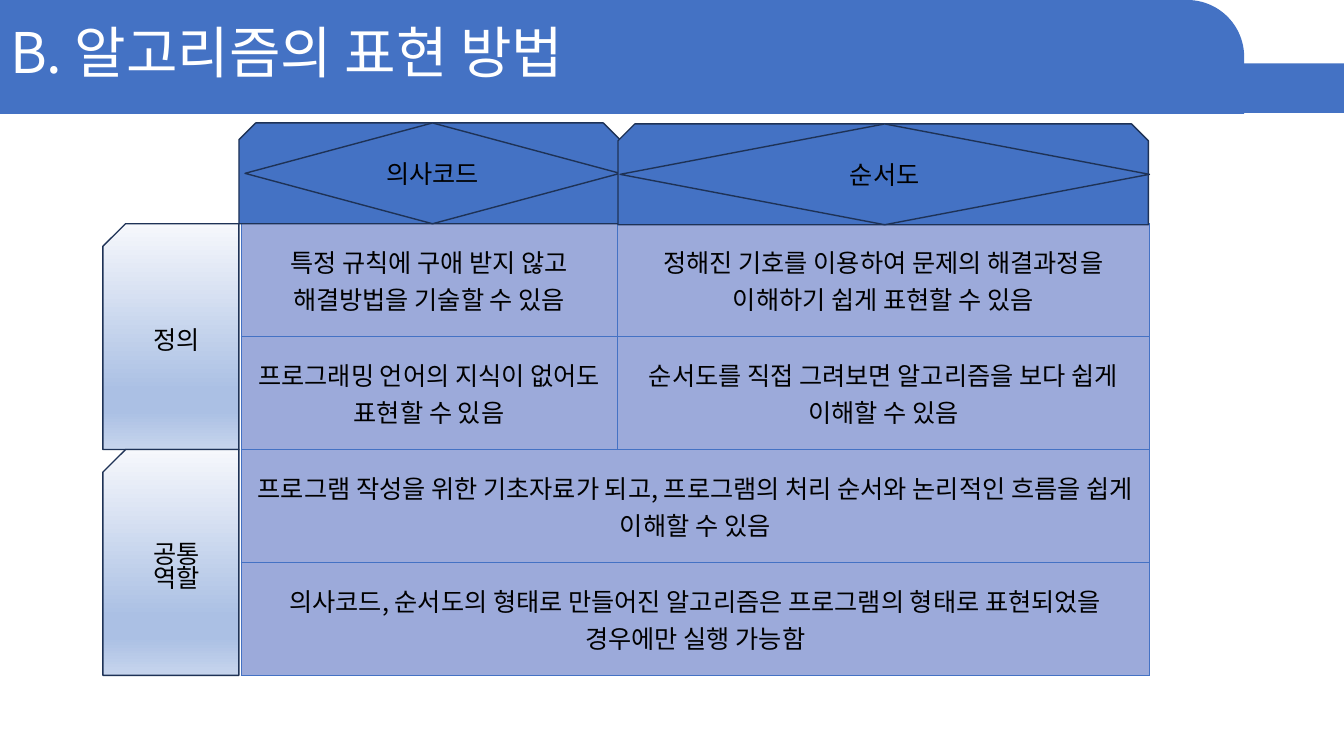
from lxml import etree
from pptx import Presentation
from pptx.dml.color import RGBColor
from pptx.enum.shapes import MSO_SHAPE as Preset
from pptx.enum.text import MSO_ANCHOR as Anchor, PP_ALIGN as Align
from pptx.oxml import parse_xml
from pptx.oxml.ns import nsdecls, qn
from pptx.util import Inches, Pt

FONT = "Noto Sans CJK KR"
BLUE, OUTLINE, CELL = "4472C4", "1E3256", "9CAADA"
GRADIENT = [(0, "F6F8FC"), (74, "ABC0E4"), (83, "ABC0E4"), (100, "C7D5ED")]

CELL_TEXTS = [
    ["특정 규칙에 구애 받지 않고 해결방법을 기술할 수 있음",
     "정해진 기호를 이용하여 문제의 해결과정을 이해하기 쉽게 표현할 수 있음"],
    ["프로그래밍 언어의 지식이 없어도 표현할 수 있음",
     "순서도를 직접 그려보면 알고리즘을 보다 쉽게 이해할 수 있음"],
    ["프로그램 작성을 위한 기초자료가 되고, 프로그램의 처리 순서와 논리적인 흐름을 쉽게 이해할 수 있음"],
    ["의사코드, 순서도의 형태로 만들어진 알고리즘은 프로그램의 형태로 표현되었을 경우에만 실행 가능함"],
]
COLUMN_WIDTHS = [3.73, 5.28]
TABLE_LEFT, TABLE_TOP, ROW_HEIGHT = 2.39, 2.22, 1.12


def color(value):
    return RGBColor.from_string(value)


def write_text(frame, text, size=18, fill="000000", align=Align.CENTER, spacing=None):
    """Fill a text frame, one paragraph for each line of text."""
    frame.word_wrap = True
    frame.vertical_anchor = Anchor.MIDDLE
    for index, line in enumerate(text.split("\n")):
        paragraph = frame.paragraphs[0] if index == 0 else frame.add_paragraph()
        paragraph.alignment = align
        paragraph.line_spacing = spacing
        run = paragraph.add_run()
        run.text = line
        run.font.size = Pt(size)
        run.font.name = FONT
        run.font.color.rgb = color(fill)
        east_asian = etree.SubElement(run.font._element, qn("a:ea"))
        east_asian.set("typeface", FONT)


def add_preset(slide, preset, left, top, width, height, outlined=True):
    shape = slide.shapes.add_shape(
        preset, Inches(left), Inches(top), Inches(width), Inches(height))
    shape.shadow.inherit = False
    shape.fill.solid()
    shape.fill.fore_color.rgb = color(BLUE)
    if outlined:
        shape.line.color.rgb = color(OUTLINE)
        shape.line.width = Pt(1)
    else:
        shape.line.fill.background()
    return shape


def add_title(slide, text):
    # Header band with a rounded tab
    add_preset(slide, Preset.RECTANGLE, 0, 0.63, 13.33, 0.49, outlined=False)
    tab = add_preset(slide, Preset.ROUND_1_RECTANGLE, 0, 0, 12.34, 1.13, outlined=False)
    tab.adjustments[0] = 0.5

    # Title in front of the band
    title = slide.shapes.title
    title.left, title.top = Inches(0), Inches(0)
    title.width, title.height = Inches(11.5), Inches(1.1)
    write_text(title.text_frame, text, size=40, fill="FFFFFF",
               align=Align.LEFT, spacing=0.9)
    slide.shapes._spTree.append(title._element)


def add_row_label(slide, text, top):
    shape = add_preset(slide, Preset.SNIP_1_RECTANGLE, 1.02, top, 1.35, 2 * ROW_HEIGHT)
    properties = shape._element.spPr
    properties.find(qn("a:xfrm")).set("flipH", "1")
    stops = "".join(
        f'<a:gs pos="{position * 1000}"><a:srgbClr val="{value}"/></a:gs>'
        for position, value in GRADIENT)
    gradient = parse_xml(
        f'<a:gradFill {nsdecls("a")} rotWithShape="1"><a:gsLst>{stops}</a:gsLst>'
        '<a:lin ang="5400000" scaled="0"/></a:gradFill>')
    properties.replace(properties.find(qn("a:solidFill")), gradient)
    write_text(shape.text_frame, text, spacing=0.82)


def add_column_header(slide, text, top, snip_span, diamond_span):
    add_preset(slide, Preset.SNIP_2_SAME_RECTANGLE, snip_span[0], top, snip_span[1], 1)
    diamond = add_preset(slide, Preset.FLOWCHART_DECISION,
                         diamond_span[0], top, diamond_span[1], 1)
    write_text(diamond.text_frame, text)


def format_cell(cell):
    properties = cell._tc.get_or_add_tcPr()
    for side in ("lnL", "lnR", "lnT", "lnB"):
        properties.append(parse_xml(
            f'<a:{side} {nsdecls("a")} w="6350"><a:solidFill>'
            f'<a:srgbClr val="{BLUE}"/></a:solidFill></a:{side}>'))
    cell.fill.solid()
    cell.fill.fore_color.rgb = color(CELL)


def add_comparison_table(slide):
    frame = slide.shapes.add_table(
        len(CELL_TEXTS), len(COLUMN_WIDTHS), Inches(TABLE_LEFT), Inches(TABLE_TOP),
        Inches(sum(COLUMN_WIDTHS)), Inches(ROW_HEIGHT * len(CELL_TEXTS)))
    table = frame.table
    table.first_row = table.horz_banding = False
    for column, width in zip(table.columns, COLUMN_WIDTHS):
        column.width = Inches(width)
    for row_index, texts in enumerate(CELL_TEXTS):
        table.rows[row_index].height = Inches(ROW_HEIGHT)
        for cell in table.rows[row_index].cells:
            format_cell(cell)
        # A single text spans the whole row
        if len(texts) == 1:
            table.cell(row_index, 0).merge(table.cell(row_index, 1))
        for column_index, text in enumerate(texts):
            cell = table.cell(row_index, column_index)
            write_text(cell.text_frame, text)
            cell.vertical_anchor = Anchor.MIDDLE


def main():
    presentation = Presentation()
    presentation.slide_width = Inches(13.33)
    presentation.slide_height = Inches(7.5)
    slide = presentation.slides.add_slide(presentation.slide_layouts[5])

    add_title(slide, "B. 알고리즘의 표현 방법")
    add_comparison_table(slide)

    # Row labels, each beside two table rows
    for index, text in enumerate(["정의", "공통\n역할"]):
        add_row_label(slide, text, TABLE_TOP + index * 2 * ROW_HEIGHT)

    # Column headers
    add_column_header(slide, "의사코드", 1.22, (2.37, 3.78), (2.43, 3.72))
    add_column_header(slide, "순서도", 1.23, (6.13, 5.26), (6.15, 5.25))

    presentation.save("out.pptx")


if __name__ == "__main__":
    main()
